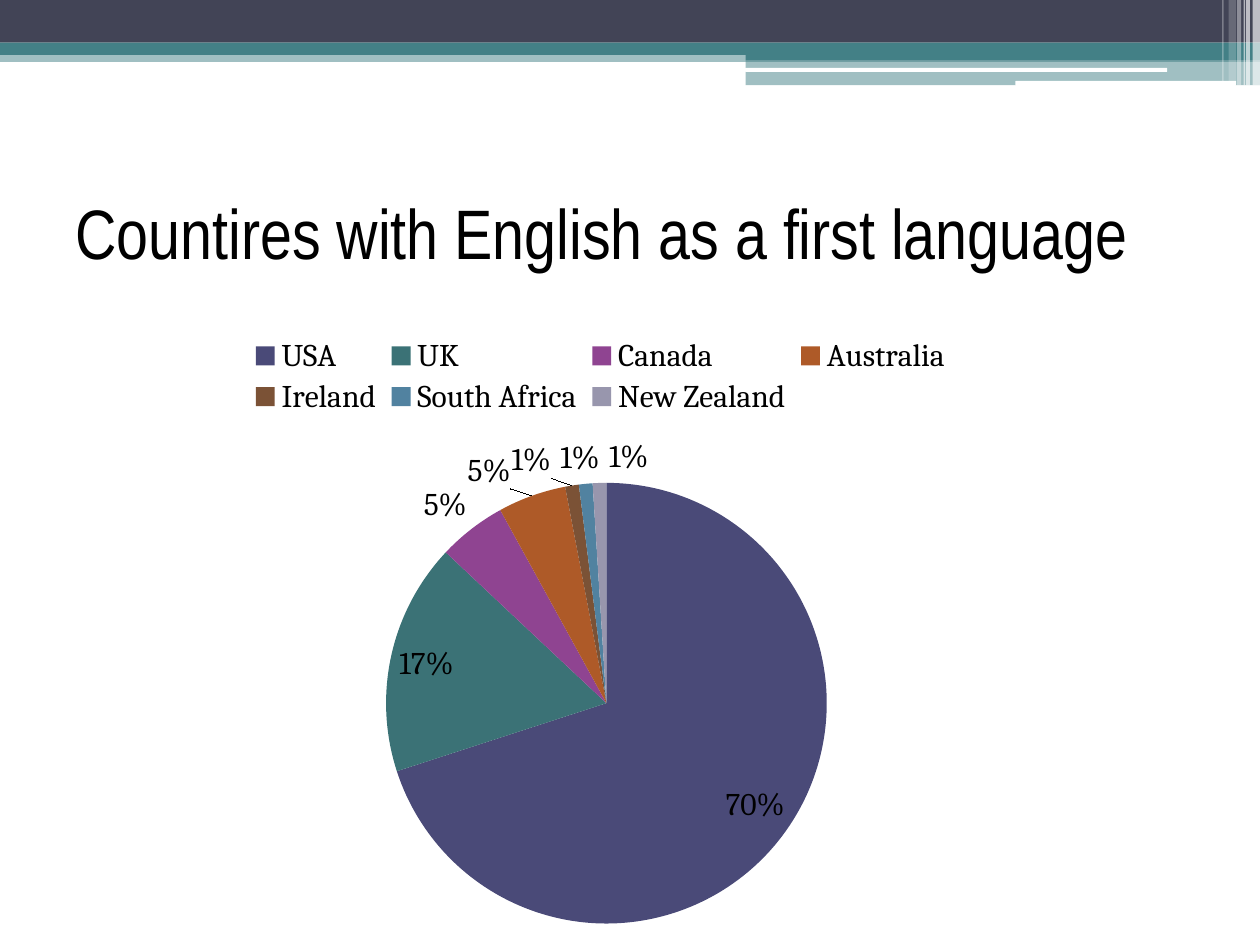
from dataclasses import dataclass

from lxml import etree
from pptx import Presentation
from pptx import util as u
from pptx.chart.data import CategoryChartData
from pptx.dml.color import RGBColor
from pptx.enum import chart as ch, shapes, text
from pptx.oxml import parse_xml
from pptx.oxml.ns import nsdecls, qn

HUES = {"navy": "424456", "teal": "438086", "white": "FFFFFF", "black": "000000"}


@dataclass
class Band:
    left: float
    top: float
    width: float
    height: float
    hue: str
    alpha: int = 100
    round: bool = False


@dataclass
class Slice:
    name: str
    share: int
    hue: str


# Header bands, then the white strips at the right edge (cm)
BANDS = [
    Band(0, 1.02, 25.4, 0.23, "teal", 50),
    Band(0, 0, 25.4, 0.86, "navy"),
    Band(0, 0.86, 25.4, 0.25, "teal"),
    Band(15.03, 0.98, 10.37, 0.24, "teal"),
    Band(15.03, 1.22, 10.37, 0.5, "teal", 50),
    Band(15.02, 1.37, 8.51, 0.08, "white", round=True),
    Band(20.47, 1.63, 4.45, 0.1, "white", round=True),
    Band(25.25, 0, 0.15, 1.73, "white", 65),
    Band(25.12, 0, 0.08, 1.73, "white", 65),
    Band(25.07, 0, 0.03, 1.73, "white", 60),
    Band(24.94, 0, 0.08, 1.73, "white", 40),
    Band(24.77, 0, 0.15, 1.63, "white", 20),
    Band(24.64, 0, 0.03, 1.63, "white", 30),
]

SLICES = [
    Slice("USA", 70, "4A4A78"),
    Slice("UK", 17, "3B7276"),
    Slice("Canada", 5, "8F4491"),
    Slice("Australia", 5, "AE5A28"),
    Slice("Ireland", 1, "7B5236"),
    Slice("South Africa", 1, "5182A0"),
    Slice("New Zealand", 1, "9896AD"),
]


def draw_band(slide, band: Band) -> None:
    kind = shapes.MSO_SHAPE.ROUNDED_RECTANGLE if band.round else shapes.MSO_SHAPE.RECTANGLE
    box = slide.shapes.add_shape(
        kind, *map(u.Cm, (band.left, band.top, band.width, band.height)))
    box.shadow.inherit = False
    box.line.fill.background()
    box.fill.solid()
    box.fill.fore_color.rgb = RGBColor.from_string(HUES[band.hue])
    if band.alpha < 100:
        tint = box.fill._xPr.find(".//" + qn("a:srgbClr"))
        etree.SubElement(tint, qn("a:alpha"), val=str(band.alpha * 1000))


def style(font, name: str, size: int) -> None:
    for key, val in {"name": name, "size": u.Pt(size), "bold": False}.items():
        setattr(font, key, val)
    font.color.rgb = RGBColor.from_string(HUES["black"])


def make_layout(x: float, y: float, w: float, h: float, inner: bool = False):
    target = '<c:layoutTarget val="inner"/>' if inner else ""
    return parse_xml(
        f'<c:layout {nsdecls("c")}><c:manualLayout>{target}'
        '<c:xMode val="edge"/><c:yMode val="edge"/>'
        f'<c:x val="{x}"/><c:y val="{y}"/><c:w val="{w}"/><c:h val="{h}"/>'
        '</c:manualLayout></c:layout>')


def draw_title(slide) -> None:
    title = slide.shapes.title
    place = {"left": 1.27, "top": 3.18, "width": 22.86, "height": 2.97}
    for key, val in place.items():
        setattr(title, key, u.Cm(val))
    frame = title.text_frame
    frame.text = "Countires with English as a first language"
    frame.vertical_anchor = text.MSO_ANCHOR.MIDDLE
    frame.paragraphs[0].alignment = text.PP_ALIGN.LEFT
    style(frame.paragraphs[0].runs[0].font, "Arial Narrow", 40)


def draw_pie(slide) -> None:
    data = CategoryChartData()
    data.categories = [s.name for s in SLICES]
    data.add_series("Share", [s.share for s in SLICES])
    pie = slide.shapes.add_chart(
        ch.XL_CHART_TYPE.PIE, *map(u.Cm, (0, 4.72, 24.21, 14.33)), data).chart
    pie.has_title = False
    style(pie.font, "Cambria", 18)

    # Legend above the pie
    pie.has_legend = True
    key = pie.legend
    key.position = ch.XL_LEGEND_POSITION.TOP
    key.include_in_layout = False
    for old in key._element.findall(qn("c:layout")):
        key._element.remove(old)
    key._element.find(qn("c:legendPos")).addnext(make_layout(0.2, 0.14, 0.6, 0.12))

    # Pie area
    area = pie._chartSpace.chart.plotArea
    for old in area.findall(qn("c:layout")):
        area.remove(old)
    area.insert(0, make_layout(0.32, 0.35, 0.37, 0.62, inner=True))

    # Slice colours and percentages
    plot = pie.plots[0]
    plot.vary_by_categories = True
    for i, part in enumerate(SLICES):
        fill = plot.series[0].points[i].format.fill
        fill.solid()
        fill.fore_color.rgb = RGBColor.from_string(part.hue)
    plot.has_data_labels = True
    marks = plot.data_labels
    looks = {"show_percentage": True, "show_value": False,
             "number_format": "0%", "number_format_is_linked": False,
             "position": ch.XL_LABEL_POSITION.BEST_FIT}
    for name, val in looks.items():
        setattr(marks, name, val)
    style(marks.font, "Cambria", 18)


def main() -> None:
    deck = Presentation()
    deck.slide_width, deck.slide_height = u.Cm(25.4), u.Cm(19.05)
    slide = deck.slides.add_slide(deck.slide_layouts[5])
    for band in BANDS:
        draw_band(slide, band)
    draw_title(slide)
    draw_pie(slide)
    deck.save("out.pptx")


if __name__ == "__main__":
    main()
